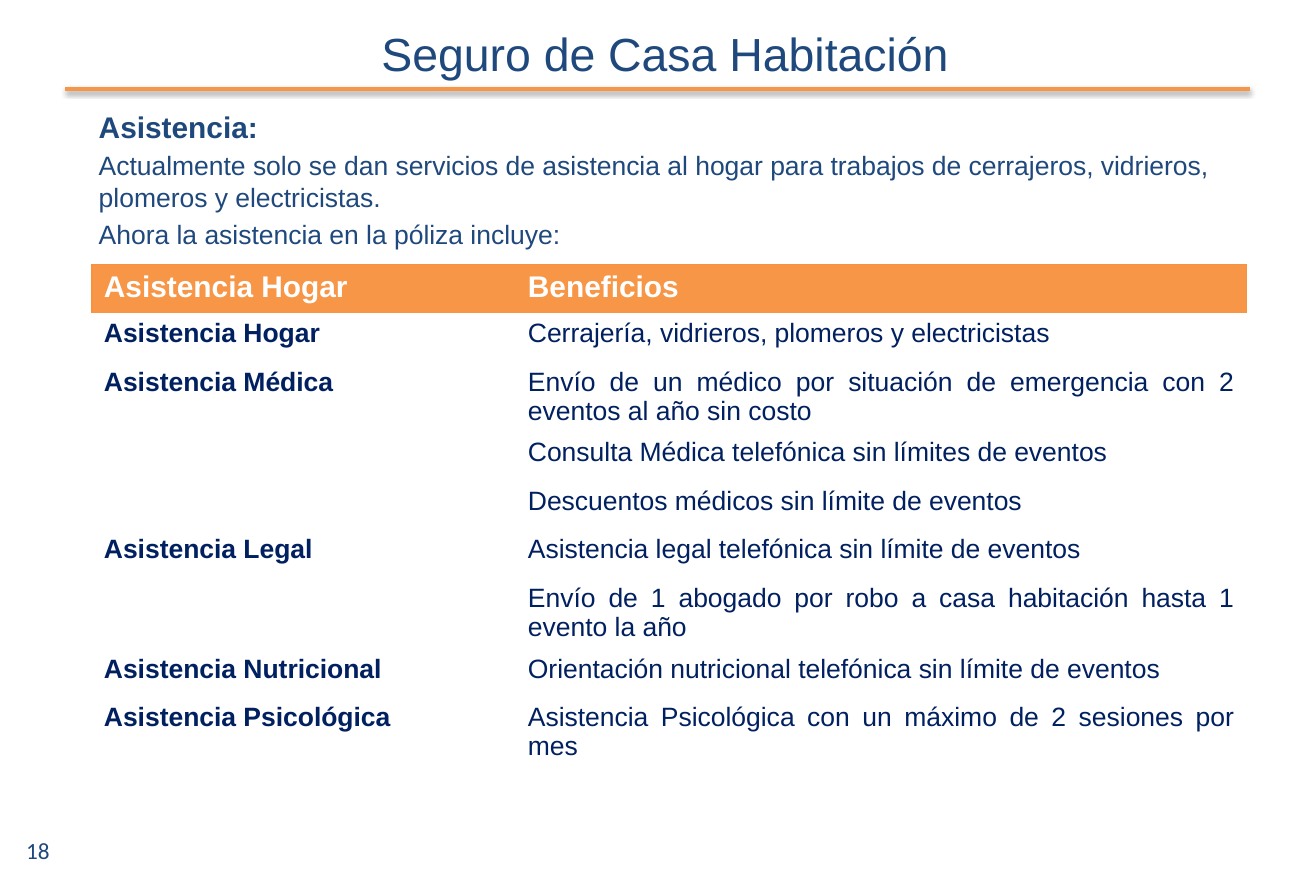
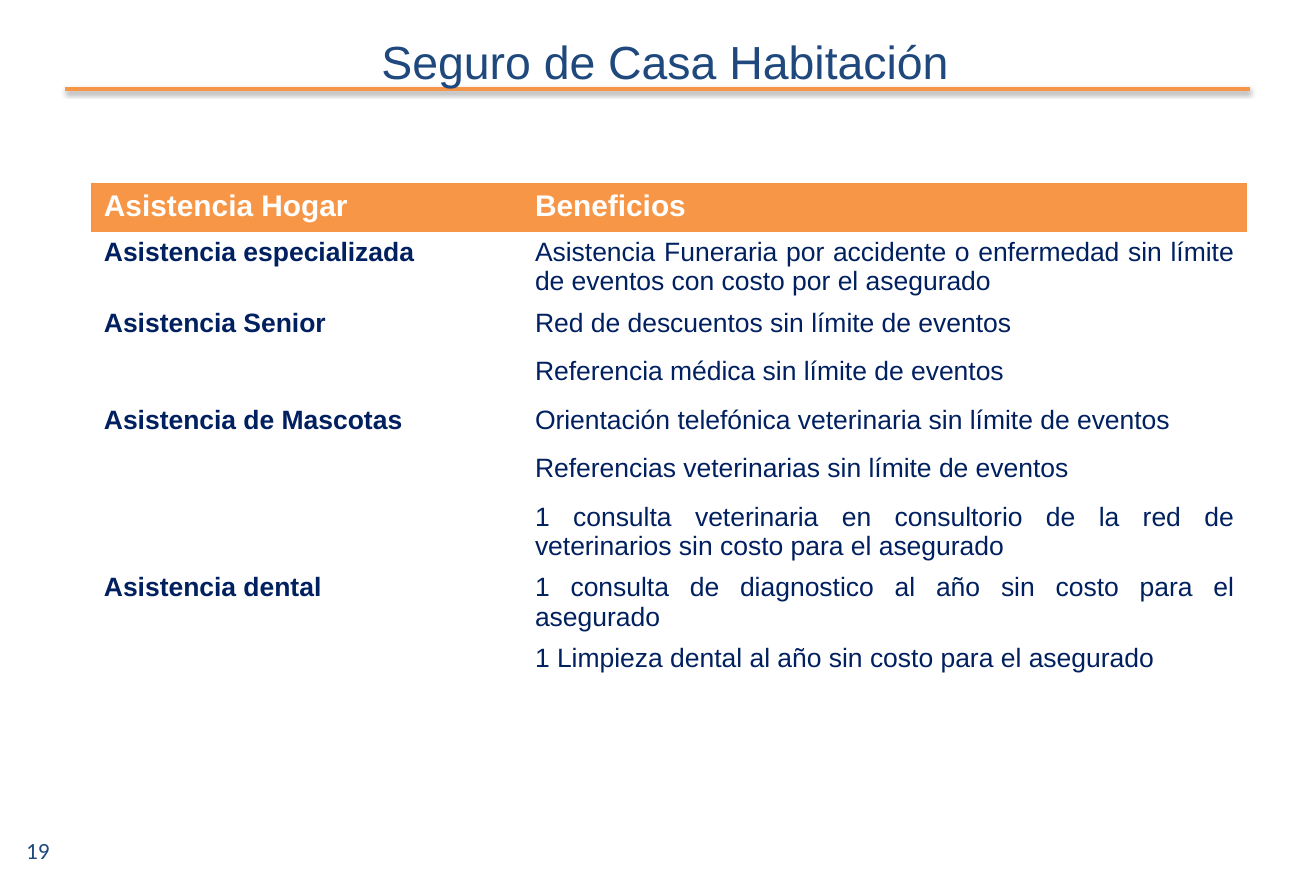
from lxml import etree
from pptx import Presentation
from pptx.dml.color import RGBColor
from pptx.enum.shapes import MSO_CONNECTOR
from pptx.enum.text import MSO_ANCHOR, PP_ALIGN
from pptx.oxml import parse_xml
from pptx.util import Pt

LEFT, CENTER, JUSTIFY = PP_ALIGN.LEFT, PP_ALIGN.CENTER, PP_ALIGN.JUSTIFY
TOP, MIDDLE = MSO_ANCHOR.TOP, MSO_ANCHOR.MIDDLE
STRAIGHT = MSO_CONNECTOR.STRAIGHT

PX = 3175  # 288 px to the inch
BLUE, NAVY, ORANGE, EDGE, WHITE = "1F497D", "002060", "F79646", "F69240", "FFFFFF"
NAMESPACE = "http://schemas.openxmlformats.org/drawingml/2006/main"
PLAIN_TABLE = "{2D5ABB26-0587-4C30-8999-92F81FD0307C}"
RULE_SHADOW = (
    f'<a:effectLst xmlns:a="{NAMESPACE}">'
    '<a:outerShdw blurRad="40000" dist="20000" dir="5400000" rotWithShape="0">'
    '<a:srgbClr val="000000"><a:alpha val="38000"/></a:srgbClr>'
    "</a:outerShdw></a:effectLst>"
)

TITLE = "Seguro de Casa Habitación"
HEADER = ("Asistencia Hogar", "Beneficios")
RULE_LEFT, RULE_RIGHT, RULE_TOP = 158, 3015, 215
TABLE_LEFT, TABLE_WIDTH, TABLE_HEIGHT = 222, 2785, 1247
ROW_HEIGHT = 117

PAGES = [
    {
        "number": "18",
        "title_top": 55,
        "intro": [
            ("Asistencia:", 18, True),
            ("Actualmente solo se dan servicios de asistencia al hogar para trabajos "
             "de cerrajeros, vidrieros, plomeros y electricistas.", 16, False),
            ("Ahora la asistencia en la póliza incluye:", 16, False),
        ],
        "table_top": 638,
        "first_column": 1023,
        "rows": [
            ("Asistencia Hogar", "Cerrajería, vidrieros, plomeros y electricistas"),
            ("Asistencia Médica", "Envío de un médico por situación de emergencia "
             "con 2 eventos al año sin costo"),
            ("", "Consulta Médica telefónica sin límites de eventos"),
            ("", "Descuentos médicos sin límite de eventos"),
            ("Asistencia Legal", "Asistencia legal telefónica sin límite de eventos"),
            ("", "Envío de 1 abogado por robo a casa habitación hasta 1 evento la año"),
            ("Asistencia Nutricional",
             "Orientación nutricional telefónica sin límite de eventos"),
            ("Asistencia Psicológica",
             "Asistencia Psicológica con un máximo de 2 sesiones por mes"),
        ],
    },
    {
        "number": "19",
        "title_top": 73,
        "intro": [],
        "table_top": 442,
        "first_column": 1040,
        "rows": [
            ("Asistencia especializada", "Asistencia Funeraria por accidente o "
             "enfermedad sin límite de eventos con costo por el asegurado"),
            ("Asistencia Senior", "Red de descuentos sin límite de eventos"),
            ("", "Referencia médica sin límite de eventos"),
            ("Asistencia de Mascotas",
             "Orientación telefónica veterinaria sin límite de eventos"),
            ("", "Referencias veterinarias sin límite de eventos"),
            ("", "1 consulta veterinaria en consultorio de la red de veterinarios "
             "sin costo para el asegurado"),
            ("Asistencia dental",
             "1 consulta de diagnostico al año sin costo para el asegurado"),
            ("", "1 Limpieza dental al año sin costo para el asegurado"),
        ],
    },
]


def write(para, text, size, color, bold=False, align=LEFT, font="Arial"):
    para.text = text
    para.alignment = align
    for span in para.runs:
        span.font.name = font
        span.font.size = Pt(size)
        span.font.bold = bold
        span.font.color.rgb = RGBColor.from_string(color)


def add_text_frame(page, left, top, width, height, anchor=TOP):
    box = page.shapes.add_textbox(left * PX, top * PX, width * PX, height * PX)
    box.text_frame.word_wrap = True
    box.text_frame.vertical_anchor = anchor
    return box.text_frame


deck = Presentation()
deck.slide_width, deck.slide_height = 3175 * PX, 2160 * PX

for content in PAGES:
    page = deck.slides.add_slide(deck.slide_layouts[6])

    rule = page.shapes.add_connector(
        STRAIGHT, RULE_LEFT * PX, RULE_TOP * PX, RULE_RIGHT * PX, RULE_TOP * PX)
    rule.line.color.rgb = RGBColor.from_string(ORANGE)
    rule.line.width = Pt(2)
    rule._element.spPr.append(parse_xml(RULE_SHADOW))

    number = add_text_frame(page, 35, 2004, 190, 115)
    write(number.paragraphs[0], content["number"], 14, BLUE, font="Calibri")

    title = add_text_frame(page, 334, content["title_top"], 2540, 147, MIDDLE)
    write(title.paragraphs[0], TITLE, 28, BLUE, align=CENTER)

    if content["intro"]:
        intro = add_text_frame(page, 210, 247, 2800, 72)
        for index, (text, size, bold) in enumerate(content["intro"]):
            para = intro.add_paragraph() if index else intro.paragraphs[0]
            write(para, text, size, BLUE, bold)
            if index:
                para.space_before = Pt(3.2)

    rows = [HEADER] + content["rows"]
    frame = page.shapes.add_table(
        len(rows), 2, TABLE_LEFT * PX, content["table_top"] * PX,
        TABLE_WIDTH * PX, TABLE_HEIGHT * PX)
    table = frame.table
    table.horz_banding = False
    table._tbl.tblPr.find(f"{{{NAMESPACE}}}tableStyleId").text = PLAIN_TABLE
    table.columns[0].width = content["first_column"] * PX
    table.columns[1].width = (TABLE_WIDTH - content["first_column"]) * PX

    for row_index, texts in enumerate(rows):
        table.rows[row_index].height = ROW_HEIGHT * PX
        for column, text in enumerate(texts):
            cell = table.cell(row_index, column)
            para = cell.text_frame.paragraphs[0]
            if row_index:
                cell.fill.background()
                cell.margin_bottom = 3 * PX
                write(para, text, 16, NAVY, column == 0, JUSTIFY if column else LEFT)
                continue
            cell.fill.solid()
            cell.fill.fore_color.rgb = RGBColor.from_string(ORANGE)
            write(para, text, 18, WHITE, True)
            properties = cell._tc.get_or_add_tcPr()
            for position, side in enumerate(("lnR" if column else "lnL", "lnT")):
                border = etree.Element(f"{{{NAMESPACE}}}{side}", w=str(Pt(0.75)))
                fill = etree.SubElement(border, f"{{{NAMESPACE}}}solidFill")
                etree.SubElement(fill, f"{{{NAMESPACE}}}srgbClr", val=EDGE)
                properties.insert(position, border)
    # Row heights reset the frame; wrapped rows need the taller one.
    frame.height = TABLE_HEIGHT * PX

deck.save("out.pptx")
